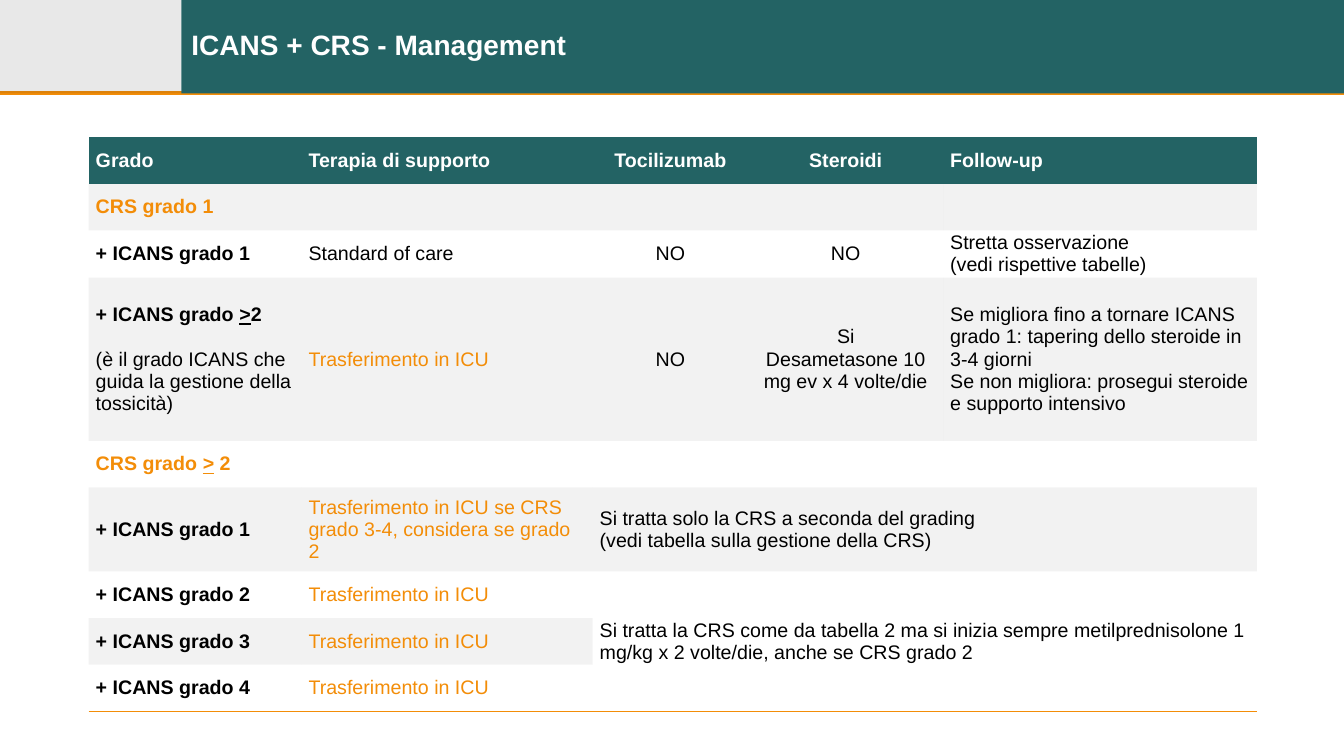
from lxml import etree
from pptx import Presentation
from pptx import util as u
from pptx.dml.color import RGBColor
from pptx.enum import shapes, text
from pptx.oxml import ns

theme = {
    "teal": "236364", "orange": "F38D08", "white": "FFFFFF", "black": "000000",
    "gray": "222222", "font": "Arial", "title": 20, "body": 14,
}

# Grid: 120 columns across, 16.2 rows down
W, H = 13.33, 7.5
col, row = W / 120, H / 16.2
bar = 2 * row
side = 16.2 * col


def paint(fill, name, share=100):
    fill.solid()
    fill.fore_color.rgb = RGBColor.from_string(theme[name])
    if share < 100:
        color = fill._xPr.find(".//" + ns.qn("a:srgbClr"))
        etree.SubElement(color, ns.qn("a:alpha"), val=str(share * 1000))


def write(para, words, size, name, bold, line=False):
    run = para.add_run()
    run.text = words
    font = run.font
    font.name, font.size = theme["font"], u.Pt(theme[size])
    font.color.rgb = RGBColor.from_string(theme[name])
    font.bold, font.underline = bold, line


deck = Presentation()
deck.slide_width, deck.slide_height = u.Inches(W), u.Inches(H)
slide = deck.slides.add_slide(deck.slide_layouts[6])
parts = slide.shapes

# Header bar: gray block, orange rule, teal band
rule = parts.add_connector(shapes.MSO_CONNECTOR.STRAIGHT, 0, u.Inches(bar),
                           u.Inches(W), u.Inches(bar))
rule.line.width = u.Pt(3)
paint(rule.line.fill, "orange")
etree.SubElement(rule._element.spPr, ns.qn("a:effectLst"))
for left, wide, name, share in [(0, side, "gray", 10), (side, W - side, "teal", 100)]:
    block = parts.add_shape(shapes.MSO_SHAPE.RECTANGLE, u.Inches(left), 0,
                            u.Inches(wide), u.Inches(bar))
    block.shadow.inherit = False
    block.line.fill.background()
    paint(block.fill, name, share)

# Title
title = parts.add_textbox(u.Inches(side), 0, u.Inches(W - side), u.Inches(bar))
frame = title.text_frame
frame.word_wrap = True
frame.vertical_anchor = text.MSO_ANCHOR.MIDDLE
frame.paragraphs[0].line_spacing = 0.9
write(frame.paragraphs[0], "ICANS + CRS - Management", "title", "white", True)

# Table content: one list per row, line breaks part paragraphs
icu = "Trasferimento in ICU"
rows = [
    ["Grado", "Terapia di supporto", "Tocilizumab", "Steroidi", "Follow-up"],
    ["CRS grado 1"],
    ["+ ICANS grado 1", "Standard of care", "NO", "NO",
     "Stretta osservazione\n(vedi rispettive tabelle)"],
    ["+ ICANS grado >2\n(è il grado ICANS che guida la gestione della tossicità)",
     icu, "NO", "Si\nDesametasone 10 mg ev x 4 volte/die",
     "Se migliora fino a tornare ICANS grado 1: tapering dello steroide in 3-4 giorni\n"
     "Se non migliora: prosegui steroide e supporto intensivo"],
    ["CRS grado > 2"],
    ["+ ICANS grado 1", icu + " se CRS grado 3-4, considera se grado 2",
     "Si tratta solo la CRS a seconda del grading\n"
     "(vedi tabella sulla gestione della CRS)"],
    ["+ ICANS grado 2", icu,
     "Si tratta la CRS come da tabella 2 ma si inizia sempre metilprednisolone "
     "1 mg/kg x 2 volte/die, anche se CRS grado 2"],
    ["+ ICANS grado 3", icu],
    ["+ ICANS grado 4", icu],
]
widths = [19, 26, 13.9, 17.4, 28]
heights = [1, 1, 1, 3.5, 1, 1.8, 1, 1, 1]

# Plain table without style bands
table = parts.add_table(len(rows), len(widths), u.Inches(7.92 * col),
                        u.Inches(2.94 * row), u.Inches(sum(widths) * col),
                        u.Inches(sum(heights) * row)).table
table.first_row = table.horz_banding = False
style = table._tbl.tblPr.find(ns.qn("a:tableStyleId"))
style.text = "{2D5ABB26-0587-4C30-8999-92F81FD0307C}"
for c, wide in enumerate(widths):
    table.columns[c].width = u.Inches(wide * col)
for r, high in enumerate(heights):
    table.rows[r].height = u.Inches(high * row)
table.cell(5, 2).merge(table.cell(5, 4))
table.cell(6, 2).merge(table.cell(8, 4))

for r, items in enumerate(rows):
    for c in range(len(widths)):
        cell = table.cell(r, c)
        cell.margin_left = cell.margin_right = u.Inches(0.07)
        cell.margin_top = cell.margin_bottom = 0
        cell.vertical_anchor = text.MSO_ANCHOR.MIDDLE

        # Teal head, then every other row shaded
        if r == 0:
            paint(cell.fill, "teal")
        elif r % 2 and not (r > 6 and c > 1):
            paint(cell.fill, "black", 5)
        else:
            cell.fill.background()

        # Orange rule below the last row
        if r == 8 or (r, c) == (6, 2):
            edge = etree.Element(ns.qn("a:lnB"), w=str(u.Pt(1)))
            solid = etree.SubElement(edge, ns.qn("a:solidFill"))
            etree.SubElement(solid, ns.qn("a:srgbClr"), val=theme["orange"])
            cell._tc.get_or_add_tcPr().insert(0, edge)

        # Text: grades are bold, the sign > is underlined
        if c >= len(items):
            continue
        for n, words in enumerate(items[c].split("\n")):
            para = cell.text_frame.paragraphs[0] if n == 0 else cell.text_frame.add_paragraph()
            if c in (2, 3) and r < 5:
                para.alignment = text.PP_ALIGN.CENTER
            if c == 0 and n:
                para.space_before = u.Pt(16)
            hot = words.startswith(("CRS", icu))
            name = "white" if r == 0 else "orange" if hot else "black"
            bold = r == 0 or (c == 0 and n == 0)
            for piece in words.partition(">"):
                if piece:
                    write(para, piece, "body", name, bold, piece == ">")

deck.save("out.pptx")
